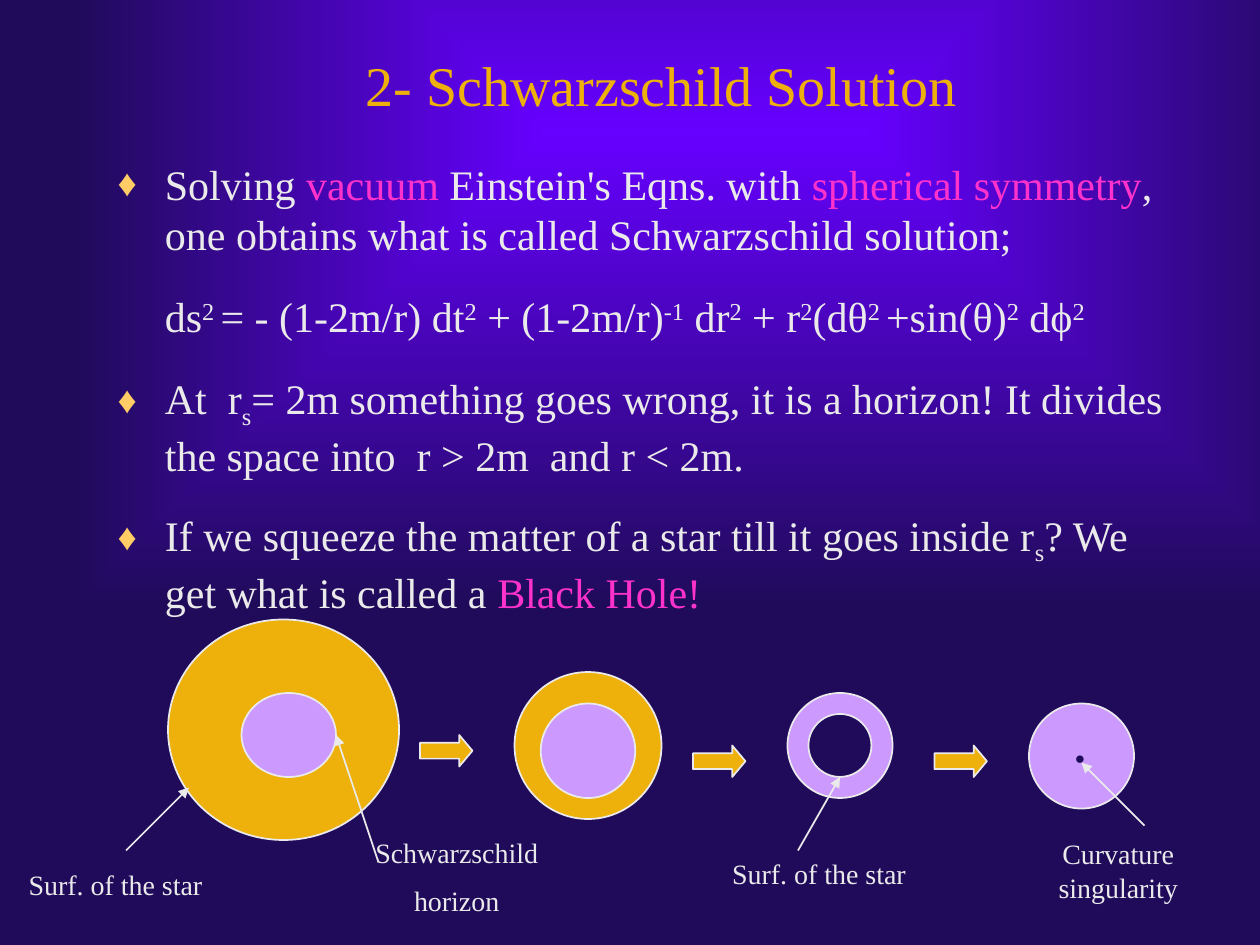
from dataclasses import dataclass
from typing import Optional

import lxml.etree
import pptx
import pptx.dml.color
import pptx.enum.shapes
import pptx.enum.text
import pptx.oxml
import pptx.oxml.ns
import pptx.util

RGBColor = pptx.dml.color.RGBColor
ShapeKind = pptx.enum.shapes.MSO_SHAPE
Align = pptx.enum.text.PP_ALIGN
qn = pptx.oxml.ns.qn

GOLD = RGBColor(0xEE, 0xB0, 0x0B)
LILAC = RGBColor(0xCC, 0x99, 0xFF)
NAVY = RGBColor(0x20, 0x0B, 0x5B)
VIOLET = RGBColor(0x66, 0x00, 0xFF)
PALE = RGBColor(0xEA, 0xEA, 0xEA)
PINK = RGBColor(0xFF, 0x33, 0xCC)
BULLET = RGBColor(0xFF, 0xCC, 0x66)

FONT = "Times New Roman"
EMU_PER_PX = 9525
HANGING = 36  # px
SUPER, SUB = 30000, -25000


@dataclass
class Frame:
    left: int
    top: int
    width: int
    height: int


@dataclass
class Span:
    text: str
    color: RGBColor = PALE
    baseline: int = 0


@dataclass
class Item:
    spans: list[Span]
    space_before: float = 0
    bullet: bool = True


@dataclass
class Figure:
    kind: ShapeKind
    frame: Frame
    fill: RGBColor


@dataclass
class Label:
    frame: Frame
    lines: list[str]
    size: int = 16
    color: RGBColor = PALE


@dataclass
class Pointer:
    start: tuple[int, int]
    end: tuple[int, int]


def px(length: int) -> int:
    return pptx.util.Emu(length * EMU_PER_PX)


def place(box, frame: Frame) -> None:
    box.left, box.top = px(frame.left), px(frame.top)
    box.width, box.height = px(frame.width), px(frame.height)


def add_span(para, span: Span, size: int) -> None:
    run = para.add_run()
    run.text = span.text
    run.font.name = FONT
    run.font.size = pptx.util.Pt(size)
    run.font.color.rgb = span.color
    if span.baseline:
        run._r.get_or_add_rPr().set("baseline", str(span.baseline))


def paragraph_at(text_frame, index: int):
    return text_frame.add_paragraph() if index else text_frame.paragraphs[0]


def paint_background(slide) -> None:
    fill = slide.background.fill
    fill.gradient()
    for stop, color, position in zip(fill.gradient_stops, (VIOLET, NAVY), (0, 1)):
        stop.color.rgb = color
        stop.position = position
    gradient = slide.element.find(".//" + qn("a:gradFill"))
    gradient.remove(gradient.find(qn("a:lin")))
    shade = lxml.etree.SubElement(gradient, qn("a:path"), {"path": "shape"})
    lxml.etree.SubElement(
        shade, qn("a:fillToRect"), {"l": "14000", "t": "6000", "r": "1000", "b": "78000"}
    )


def add_item(para, item: Item) -> None:
    para.space_before = pptx.util.Pt(item.space_before)
    props = para._p.get_or_add_pPr()
    props.set("marL", str(px(HANGING)))
    props.set("indent", str(-px(HANGING) if item.bullet else 0))
    if item.bullet:
        color = lxml.etree.SubElement(props, qn("a:buClr"))
        lxml.etree.SubElement(color, qn("a:srgbClr"), {"val": str(BULLET)})
        lxml.etree.SubElement(props, qn("a:buSzPct"), {"val": "90000"})
        lxml.etree.SubElement(props, qn("a:buFont"), {"typeface": FONT})
        lxml.etree.SubElement(props, qn("a:buChar"), {"char": "♦"})
    else:
        lxml.etree.SubElement(props, qn("a:buNone"))
    for span in item.spans:
        add_span(para, span, 24)


def draw_figure(slide, figure: Figure) -> None:
    shape = slide.shapes.add_shape(figure.kind, 0, 0, 0, 0)
    place(shape, figure.frame)
    shape.shadow.inherit = False
    shape.fill.solid()
    shape.fill.fore_color.rgb = figure.fill
    shape.line.color.rgb = PALE
    shape.line.width = pptx.util.Pt(1)
    if figure.kind == ShapeKind.RIGHT_ARROW:
        shape.adjustments[1] = 0.42


def draw_label(slide, label: Label) -> None:
    box = slide.shapes.add_textbox(0, 0, 0, 0)
    place(box, label.frame)
    box.text_frame.word_wrap = True
    for index, line in enumerate(label.lines):
        para = paragraph_at(box.text_frame, index)
        para.alignment = Align.CENTER
        para.space_before = pptx.util.Pt(8 if index else 0)
        add_span(para, Span(line, label.color), label.size)


def draw_pointer(slide, pointer: Pointer) -> None:
    ends = [px(value) for value in pointer.start + pointer.end]
    line = slide.shapes.add_connector(pptx.enum.shapes.MSO_CONNECTOR.STRAIGHT, *ends)
    line.line.color.rgb = PALE
    line.line.width = pptx.util.Pt(1)
    lxml.etree.SubElement(line.line._get_or_add_ln(), qn("a:tailEnd"), {"type": "triangle"})
    lxml.etree.SubElement(line._element.spPr, qn("a:effectLst"))


ITEMS = [
    Item([Span("Solving "), Span("vacuum", PINK), Span(" Einstein's Eqns. with "),
          Span("spherical symmetry", PINK),
          Span(", one obtains what is called Schwarzschild solution;")]),
    Item([Span("ds"), Span("2 ", baseline=SUPER), Span("= - (1-2m/r) dt"),
          Span("2", baseline=SUPER), Span(" + (1-2m/r)"), Span("-1", baseline=SUPER),
          Span(" dr"), Span("2", baseline=SUPER), Span(" + r"), Span("2", baseline=SUPER),
          Span("(dθ"), Span("2 ", baseline=SUPER), Span("+sin(θ)"),
          Span("2", baseline=SUPER), Span(" dϕ"), Span("2", baseline=SUPER)],
         18, bullet=False),
    Item([Span("At  r"), Span("s", baseline=SUB),
          Span("= 2m something goes wrong, it is a horizon! It divides the space into"
               "  r > 2m  and r < 2m.")], 18),
    Item([Span("If we squeeze the matter of a star till it goes inside r"),
          Span("s", baseline=SUB), Span("? We get what is called a "),
          Span("Black Hole!", PINK)], 16.5),
]

# Four stages of collapse, left to right, then the arrows between them
FIGURES = [
    Figure(ShapeKind.OVAL, Frame(128, 472, 176, 168), GOLD),
    Figure(ShapeKind.OVAL, Frame(184, 528, 72, 64), LILAC),
    Figure(ShapeKind.OVAL, Frame(392, 512, 112, 112), GOLD),
    Figure(ShapeKind.OVAL, Frame(412, 536, 72, 72), LILAC),
    Figure(ShapeKind.OVAL, Frame(600, 528, 80, 80), LILAC),
    Figure(ShapeKind.OVAL, Frame(616, 544, 48, 48), NAVY),
    Figure(ShapeKind.OVAL, Frame(784, 536, 80, 80), LILAC),
] + [
    Figure(ShapeKind.RIGHT_ARROW, Frame(left, top, 40, 24), GOLD)
    for left, top in ((320, 560), (528, 568), (712, 568))
]

LABELS = [
    Label(Frame(248, 632, 200, 74), ["Schwarzschild", "horizon"]),
    Label(Frame(0, 656, 176, 36), ["Surf. of the star"]),
    Label(Frame(536, 648, 176, 36), ["Surf. of the star"]),
    Label(Frame(764, 633, 176, 61), ["Curvature singularity"]),
    Label(Frame(808, 528, 24, 67), ["."], 36, NAVY),
]

POINTERS = [
    Pointer((288, 656), (256, 560)),
    Pointer((96, 648), (144, 600)),
    Pointer((608, 648), (640, 592)),
    Pointer((872, 629), (824, 581)),
]


def main() -> None:
    deck = pptx.Presentation()
    deck.slide_width, deck.slide_height = px(960), px(720)
    slide = deck.slides.add_slide(deck.slide_layouts[1])
    paint_background(slide)

    # Title
    title = slide.shapes.title
    place(title, Frame(72, 32, 864, 64))
    title.text_frame.vertical_anchor = pptx.enum.text.MSO_ANCHOR.MIDDLE
    para = title.text_frame.paragraphs[0]
    para.alignment = Align.CENTER
    add_span(para, Span("2- Schwarzschild Solution", GOLD), 32)

    # Body list
    body = slide.placeholders[1]
    place(body, Frame(80, 88, 832, 600))
    body.text_frame.auto_size = pptx.enum.text.MSO_AUTO_SIZE.NONE
    body.text_frame.margin_top = pptx.util.Pt(24.5)
    for index, item in enumerate(ITEMS):
        add_item(paragraph_at(body.text_frame, index), item)

    # Collapse diagram
    for figure in FIGURES:
        draw_figure(slide, figure)
    for label in LABELS:
        draw_label(slide, label)
    for pointer in POINTERS:
        draw_pointer(slide, pointer)

    deck.save("out.pptx")


if __name__ == "__main__":
    main()
